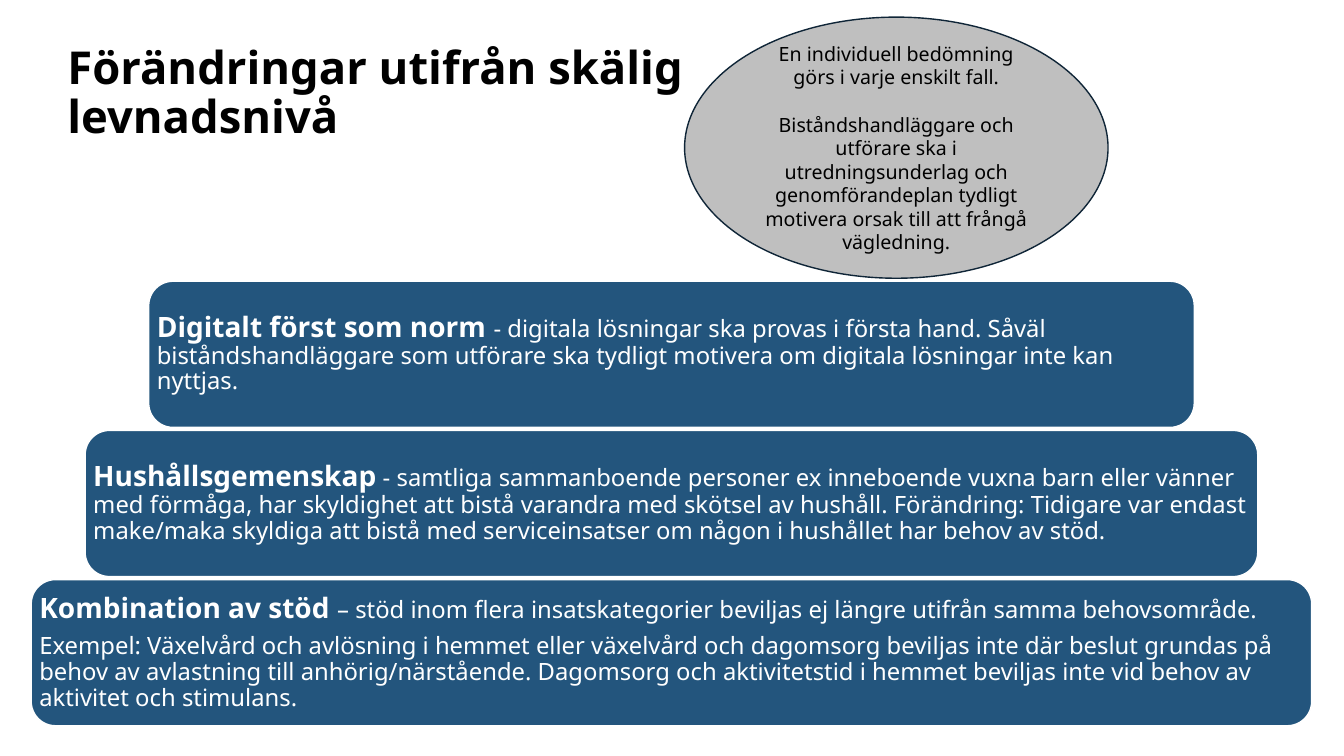
from dataclasses import dataclass

from pptx import Presentation
from pptx import util as u
from pptx.dml.color import RGBColor
from pptx.enum import shapes, text

WIDTH, HEIGHT = u.Inches(13.33), u.Inches(7.5)
FONT = "Noto Sans"
BLACK = RGBColor(0x00, 0x00, 0x00)
WHITE = RGBColor(0xFF, 0xFF, 0xFF)
BLUE = RGBColor(0x23, 0x55, 0x7D)
NAVY = RGBColor(0x0F, 0x25, 0x37)
GREY = RGBColor(0xBF, 0xBF, 0xBF)

# The pyramid's rows, in inches
CENTRE, FIRST_TOP, PITCH, STEP_HEIGHT = 6.66, 2.79, 1.48, 1.45


@dataclass(frozen=True)
class Area:
    """A rectangle given as shares of the slide's size."""
    left: float
    top: float
    width: float
    height: float

    def emu(self) -> tuple[int, int, int, int]:
        return (int(self.left * WIDTH), int(self.top * HEIGHT),
                int(self.width * WIDTH), int(self.height * HEIGHT))


@dataclass(frozen=True)
class Step:
    width: float
    heading: str
    body: str
    example: str = ""


TITLE = "Förändringar utifrån skälig levnadsnivå"
TITLE_AREA = Area(0.57 / 13.33, 0.51 / 7.5, 8.23 / 13.33, 0.86 / 7.5)
NOTE_AREA = Area(6.79 / 13.33, 0.17 / 7.5, 4.2 / 13.33, 2.59 / 7.5)
NOTE = (
    "En individuell bedömning görs i varje enskilt fall.",
    "Biståndshandläggare och utförare ska i utredningsunderlag och "
    "genomförandeplan tydligt motivera orsak till att frångå vägledning.",
)
STEPS = (
    Step(10.37, "Digitalt först som norm ",
         "- digitala lösningar ska provas i första hand. Såväl "
         "biståndshandläggare som utförare ska tydligt motivera om digitala "
         "lösningar inte kan nyttjas."),
    Step(11.63, "Hushållsgemenskap",
         " - samtliga sammanboende personer ex inneboende vuxna barn eller "
         "vänner med förmåga, har skyldighet att bistå varandra med skötsel av "
         "hushåll. Förändring: Tidigare var endast make/maka skyldiga att "
         "bistå med serviceinsatser om någon i hushållet har behov av stöd."),
    Step(12.7, "Kombination av stöd ",
         "– stöd inom flera insatskategorier beviljas ej längre utifrån samma "
         "behovsområde.",
         "Exempel: Växelvård och avlösning i hemmet eller växelvård och "
         "dagomsorg beviljas inte där beslut grundas på behov av avlastning "
         "till anhörig/närstående. Dagomsorg och aktivitetstid i hemmet "
         "beviljas inte vid behov av aktivitet och stimulans."),
)


def set_font(font, size: float, colour: RGBColor, bold: bool = False) -> None:
    font.name, font.size, font.bold = FONT, u.Pt(size), bold
    font.color.rgb = colour


def prepare_frame(box):
    frame = box.text_frame
    frame.word_wrap = True
    frame.vertical_anchor = text.MSO_ANCHOR.MIDDLE
    return frame


def add_filled_shape(page, kind, area: Area, fill: RGBColor, line: RGBColor):
    shape = page.shapes.add_shape(kind, *area.emu())
    shape.shadow.inherit = False
    shape.fill.solid()
    shape.fill.fore_color.rgb = fill
    shape.line.color.rgb = line
    shape.line.width = u.Pt(1)
    return shape


def add_title(page) -> None:
    frame = prepare_frame(page.shapes.add_textbox(*TITLE_AREA.emu()))
    para = frame.paragraphs[0]
    para.text = TITLE
    para.line_spacing = 0.9
    set_font(para.font, 32.4, BLACK, bold=True)


def add_step(page, row: int, step: Step) -> None:
    area = Area((CENTRE - step.width / 2) / 13.33,
                (FIRST_TOP + row * PITCH) / 7.5,
                step.width / 13.33, STEP_HEIGHT / 7.5)
    box = add_filled_shape(page, shapes.MSO_SHAPE.ROUNDED_RECTANGLE,
                           area, BLUE, WHITE)
    frame = prepare_frame(box)
    # The rounded corners add the rest of the inset
    frame.margin_left = frame.margin_right = u.Inches(0.01)
    frame.margin_top = frame.margin_bottom = u.Inches(0.01)

    para = frame.paragraphs[0]
    for words, size, bold in ((step.heading, 20, True), (step.body, 17, False)):
        span = para.add_run()
        span.text = words
        set_font(span.font, size, WHITE, bold)
    if step.example:
        example = frame.add_paragraph()
        example.text = step.example
        set_font(example.font, 17, WHITE)
    for para in frame.paragraphs:
        para.alignment = text.PP_ALIGN.LEFT
        para.line_spacing = 0.9
        para.space_after = u.Pt(7)


def add_note(page) -> None:
    box = add_filled_shape(page, shapes.MSO_SHAPE.OVAL, NOTE_AREA, GREY, NAVY)
    frame = prepare_frame(box)
    for index, words in enumerate(NOTE):
        para = frame.add_paragraph() if index else frame.paragraphs[0]
        para.text = words
        para.alignment = text.PP_ALIGN.CENTER
        if index:
            para.space_before = u.Pt(17)
        set_font(para.font, 14, BLACK)


def main() -> None:
    deck = Presentation()
    deck.slide_width, deck.slide_height = WIDTH, HEIGHT
    page = deck.slides.add_slide(deck.slide_layouts[6])
    add_title(page)
    for row, step in enumerate(STEPS):
        add_step(page, row, step)
    add_note(page)
    deck.save("out.pptx")


if __name__ == "__main__":
    main()
